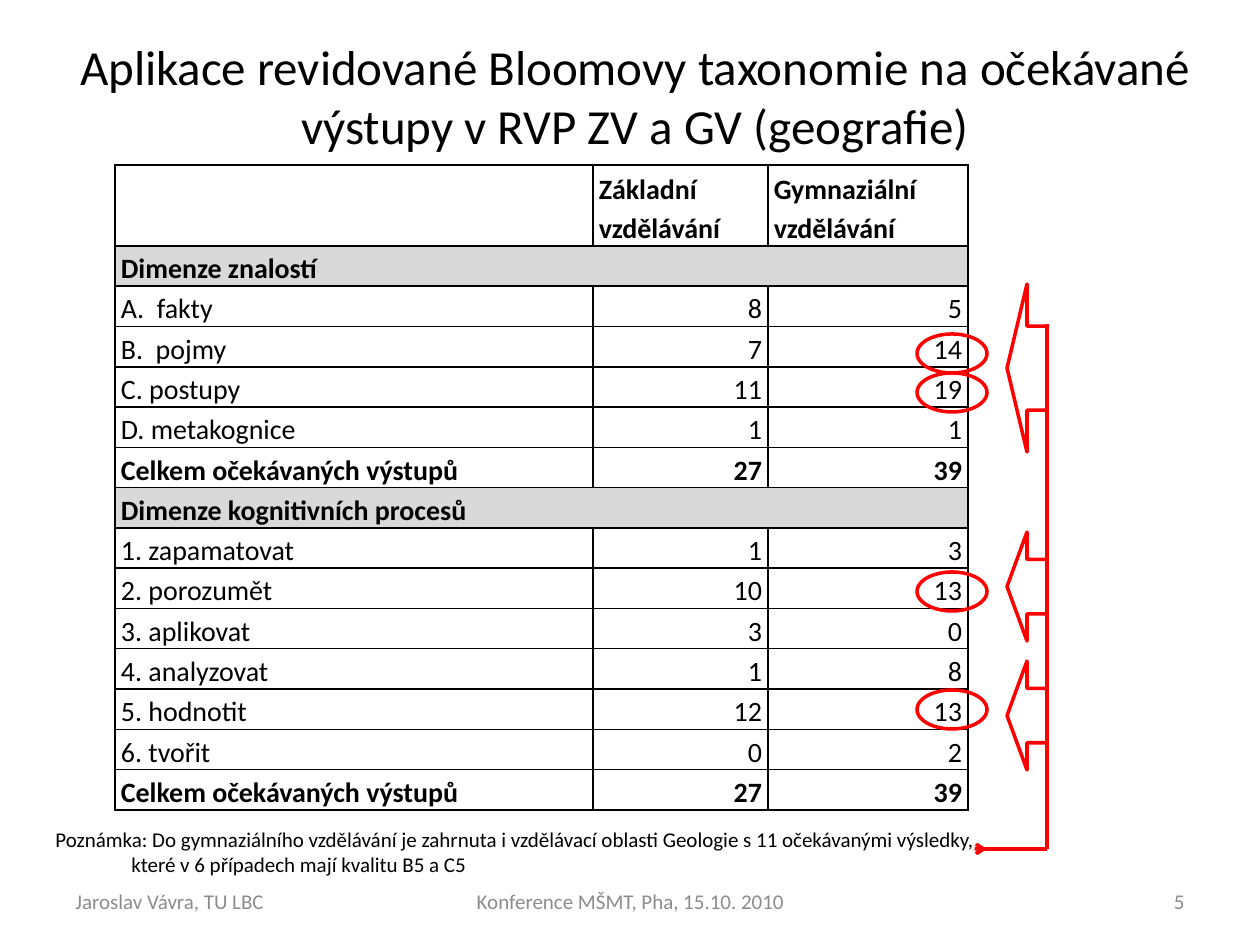
from dataclasses import dataclass
from lxml.etree import SubElement
from pptx import Presentation
from pptx.dml.color import RGBColor as RGB
from pptx.enum.shapes import MSO_CONNECTOR as LINK, MSO_SHAPE as SHAPE
from pptx.enum.text import MSO_ANCHOR as ANCHOR, PP_ALIGN as ALIGN
from pptx.oxml import parse_xml
from pptx.oxml.ns import nsdecls, qn
from pptx.util import Emu, Pt


@dataclass
class Theme:
    face: str = "Calibri"
    ink: str = "000000"
    gray: str = "8C8C8C"
    band: str = "D9D9D9"
    red: str = "FF0000"
    title: int = 28
    body: int = 16
    small: int = 12
    rule: int = 1
    mark: int = 2


theme = Theme()
SCALE = 914400 / 126


def px(*sizes):
    return [Emu(round(size * SCALE)) for size in sizes]


def style(para, size, color=theme.ink, align=ALIGN.LEFT, bold=False):
    para.alignment = align
    font = para.font
    font.name, font.size, font.bold = theme.face, Pt(size), bold
    font.color.rgb = RGB.from_string(color)


deck = Presentation()
deck.slide_width, deck.slide_height = px(1260, 945)
slide = deck.slides.add_slide(deck.slide_layouts[5])
shapes = slide.shapes

# Title
title = shapes.title
title.left, title.top, title.width, title.height = px(54, 32, 1162, 126)
title.text_frame.text = "Aplikace revidované Bloomovy taxonomie na očekávané výstupy v RVP ZV a GV (geografie)"
title.text_frame.vertical_anchor = ANCHOR.MIDDLE
style(title.text_frame.paragraphs[0], theme.title, align=ALIGN.CENTER)

# Table: rows with a single entry are section bands
rows = [
    ("", "Základní vzdělávání", "Gymnaziální vzdělávání"),
    ("Dimenze znalostí",),
    ("A.  fakty", 8, 5),
    ("B.  pojmy", 7, 14),
    ("C. postupy", 11, 19),
    ("D. metakognice", 1, 1),
    ("Celkem očekávaných výstupů", 27, 39),
    ("Dimenze kognitivních procesů",),
    ("1. zapamatovat", 1, 3),
    ("2. porozumět", 10, 13),
    ("3. aplikovat", 3, 0),
    ("4. analyzovat", 1, 8),
    ("5. hodnotit", 12, 13),
    ("6. tvořit", 0, 2),
    ("Celkem očekávaných výstupů", 27, 39),
]
cols = [478, 175, 200]
tall, head = 645, 81
step = (tall - head) / (len(rows) - 1)
table = shapes.add_table(len(rows), len(cols), *px(115, 165, sum(cols), tall)).table
table.first_row = table.horz_banding = False
for col, width in zip(table.columns, px(*cols)):
    col.width = width

for r, row in enumerate(rows):
    table.rows[r].height = px(step if r else head)[0]
    band = len(row) == 1
    bold = r == 0 or band or row[0].startswith("Celkem")
    for c in range(len(cols)):
        cell = table.cell(r, c)
        cell.vertical_anchor = ANCHOR.BOTTOM
        cell.margin_left, cell.margin_right, cell.margin_top, cell.margin_bottom = px(6, 6, 0, 0)
        if band:
            cell.fill.solid()
            cell.fill.fore_color.rgb = RGB.from_string(theme.band)
        else:
            cell.fill.background()
        props = cell._tc.get_or_add_tcPr()
        for i, side in enumerate(("lnL", "lnR", "lnT", "lnB")):
            props.insert(i, parse_xml(
                f'<a:{side} {nsdecls("a")} w="{Pt(theme.rule)}"><a:solidFill>'
                f'<a:srgbClr val="{theme.ink}"/></a:solidFill></a:{side}>'))
        if c < len(row):
            cell.text = str(row[c])
            para = cell.text_frame.paragraphs[0]
            para.line_spacing = 1.15
            style(para, theme.body, bold=bold, align=ALIGN.RIGHT if r and c else ALIGN.LEFT)
    if band:
        table.cell(r, 0).merge(table.cell(r, len(cols) - 1))

# Note under the table, second line indented
note = shapes.add_textbox(*px(43, 820, 955, 89)).text_frame
note.word_wrap = False
note.text = ("Poznámka: Do gymnaziálního vzdělávání je zahrnuta i vzdělávací oblasti Geologie s 11 očekávanými výsledky,\n"
             "které v 6 případech mají kvalitu B5 a C5")
for para in note.paragraphs:
    style(para, theme.small)
note.paragraphs[1]._p.get_or_add_pPr().set("marL", str(px(76)[0]))

# Red rings round the high values and arrows pointing at the table
rings = [(SHAPE.OVAL, 917, top, 70, 39, 0) for top in (334, 373, 572, 690)]
arrows = [(SHAPE.RIGHT_ARROW, 1007, top, 40, high, 180)
          for top, high in ((284, 168), (532, 109), (661, 109))]
for kind, left, top, width, high, turn in rings + arrows:
    mark = shapes.add_shape(kind, *px(left, top, width, high))
    mark.rotation = turn
    mark.shadow.inherit = False
    mark.fill.background()
    mark.line.color.rgb = RGB.from_string(theme.red)
    mark.line.width = Pt(theme.mark)

# Red line from the note up to the arrows
for x1, y1, x2, y2, tip in (
    (978, 849, 1047, 849, False),
    (1047, 849, 1047, 324, False),
    (978, 849, 987, 849, True),
):
    link = shapes.add_connector(LINK.STRAIGHT, *px(x1, y1, x2, y2))
    link.line.color.rgb = RGB.from_string(theme.red)
    link.line.width = Pt(theme.mark)
    if tip:
        SubElement(link.line._get_or_add_ln(), qn("a:tailEnd"), type="arrow")
    SubElement(link._element.spPr, qn("a:effectLst"))

# Footer
for text, left, width, align in (
    ("Jaroslav Vávra, TU LBC", 63, 294, ALIGN.LEFT),
    ("Konference MŠMT, Pha, 15.10. 2010", 431, 399, ALIGN.CENTER),
    ("5", 903, 294, ALIGN.RIGHT),
):
    foot = shapes.add_textbox(*px(left, 876, width, 50)).text_frame
    foot.word_wrap = True
    foot.vertical_anchor = ANCHOR.MIDDLE
    foot.text = text
    style(foot.paragraphs[0], theme.small, theme.gray, align)

deck.save("out.pptx")
